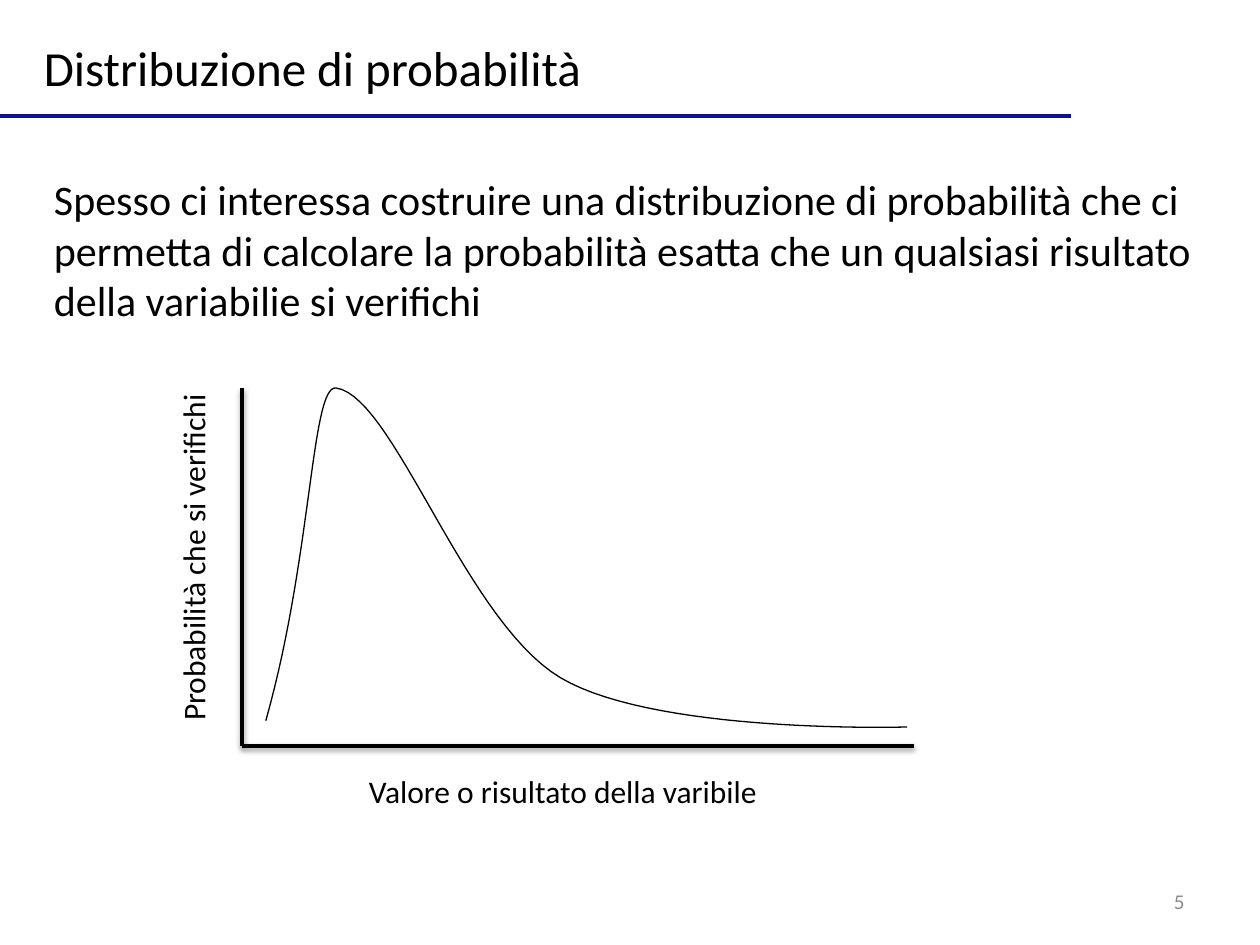
from dataclasses import dataclass

from lxml import etree
from pptx import Presentation
from pptx.dml.color import RGBColor
from pptx.enum.shapes import MSO_CONNECTOR
from pptx.enum.text import MSO_ANCHOR, MSO_AUTO_SIZE, PP_ALIGN
from pptx.oxml.ns import qn
from pptx.util import Inches, Pt

STRAIGHT = MSO_CONNECTOR.STRAIGHT
TOP, MIDDLE = MSO_ANCHOR.TOP, MSO_ANCHOR.MIDDLE
LEFT, RIGHT = PP_ALIGN.LEFT, PP_ALIGN.RIGHT
FIT_SHAPE = MSO_AUTO_SIZE.SHAPE_TO_FIT_TEXT
NO_FIT = MSO_AUTO_SIZE.NONE


@dataclass(frozen=True)
class Theme:
    font: str = "Calibri"
    ink: str = "000000"
    rule: str = "0C1290"
    muted: str = "8C8C8C"
    title_size: float = 28
    body_size: float = 24
    label_size: float = 18
    number_size: float = 12
    line_width: float = 2
    curve_width: float = 0.75


THEME = Theme()
ORIGIN = (1.92, 5.92)
AXIS_TOP = (1.92, 3.08)
AXIS_END = (7.25, 5.92)
CURVE_START = (2.11, 5.72)
CURVE_SEGMENTS = [
    ((2.48, 4.41), (2.47, 3.04), (2.67, 3.08)),
    ((3.13, 3.15), (3.69, 4.93), (4.45, 5.38)),
    ((5.21, 5.83), (7.2, 5.77), (7.2, 5.77)),
]
STEPS = 30


def add_text(page, text, frame, size, color=THEME.ink, wrap=False,
             anchor=TOP, align=LEFT, fit=FIT_SHAPE, rotation=0):
    box = page.shapes.add_textbox(*map(Inches, frame))
    box.rotation = rotation
    frame_format = {"word_wrap": wrap, "auto_size": fit, "vertical_anchor": anchor}
    for name, value in frame_format.items():
        setattr(box.text_frame, name, value)
    para = box.text_frame.paragraphs[0]
    para.alignment = align
    span = para.add_run()
    span.text = text
    for name, value in {"name": THEME.font, "size": Pt(size)}.items():
        setattr(span.font, name, value)
    span.font.color.rgb = RGBColor.from_string(color)


def add_shadow(effects):
    shadow = etree.SubElement(effects, qn("a:outerShdw"), {
        "blurRad": str(Pt(3.1)), "dist": str(Pt(1.6)),
        "dir": "5400000", "rotWithShape": "0",
    })
    color = etree.SubElement(shadow, qn("a:srgbClr"), val=THEME.ink)
    etree.SubElement(color, qn("a:alpha"), val="38000")


def add_line(page, start, end, color=THEME.ink, shadow=False):
    line = page.shapes.add_connector(STRAIGHT, *map(Inches, start + end))
    line.line.color.rgb = RGBColor.from_string(color)
    line.line.width = Pt(THEME.line_width)
    effects = etree.SubElement(line.element.spPr, qn("a:effectLst"))
    if shadow:
        add_shadow(effects)


def bezier_point(controls, position):
    rest = 1 - position
    weights = (rest ** 3, 3 * rest ** 2 * position,
               3 * rest * position ** 2, position ** 3)
    return tuple(Inches(sum(weight * value for weight, value in zip(weights, axis)))
                 for axis in zip(*controls))


def add_curve(page, start, segments):
    builder = page.shapes.build_freeform(*map(Inches, start))
    for segment in segments:
        controls = (start, *segment)
        points = [bezier_point(controls, step / STEPS) for step in range(1, STEPS + 1)]
        builder.add_line_segments(points, close=False)
        start = segment[-1]
    curve = builder.convert_to_shape()
    curve.shadow.inherit = False
    curve.fill.background()
    curve.line.color.rgb = RGBColor.from_string(THEME.ink)
    curve.line.width = Pt(THEME.curve_width)


def main():
    deck = Presentation()
    deck.slide_width, deck.slide_height = Inches(10), Inches(7.5)
    page = deck.slides.add_slide(deck.slide_layouts[6])

    add_text(page, "5", (7.17, 6.95, 2.33, 0.4), THEME.number_size, THEME.muted,
             wrap=True, anchor=MIDDLE, align=RIGHT, fit=NO_FIT)
    add_text(page, "Distribuzione di probabilità", (0.25, 0.25, 4.51, 0.57),
             THEME.title_size, anchor=MIDDLE)
    add_line(page, (0, 0.92), (8.5, 0.92), THEME.rule)
    add_text(page, "Spesso ci interessa costruire una distribuzione di probabilità "
             "che ci permetta di calcolare la probabilità esatta che un qualsiasi "
             "risultato della variabilie si verifichi",
             (0.33, 1.33, 9.25, 1.31), THEME.body_size, wrap=True)

    for start, end in ((AXIS_TOP, ORIGIN), (AXIS_END, ORIGIN)):
        add_line(page, start, end, shadow=True)
    add_text(page, "Valore o risultato della varibile", (2.83, 6.08, 3.32, 0.4),
             THEME.label_size)
    add_text(page, "Probabilità che si verifichi", (0.12, 4.21, 2.82, 0.4),
             THEME.label_size, rotation=270)
    add_curve(page, CURVE_START, CURVE_SEGMENTS)

    deck.save("out.pptx")


if __name__ == "__main__":
    main()
